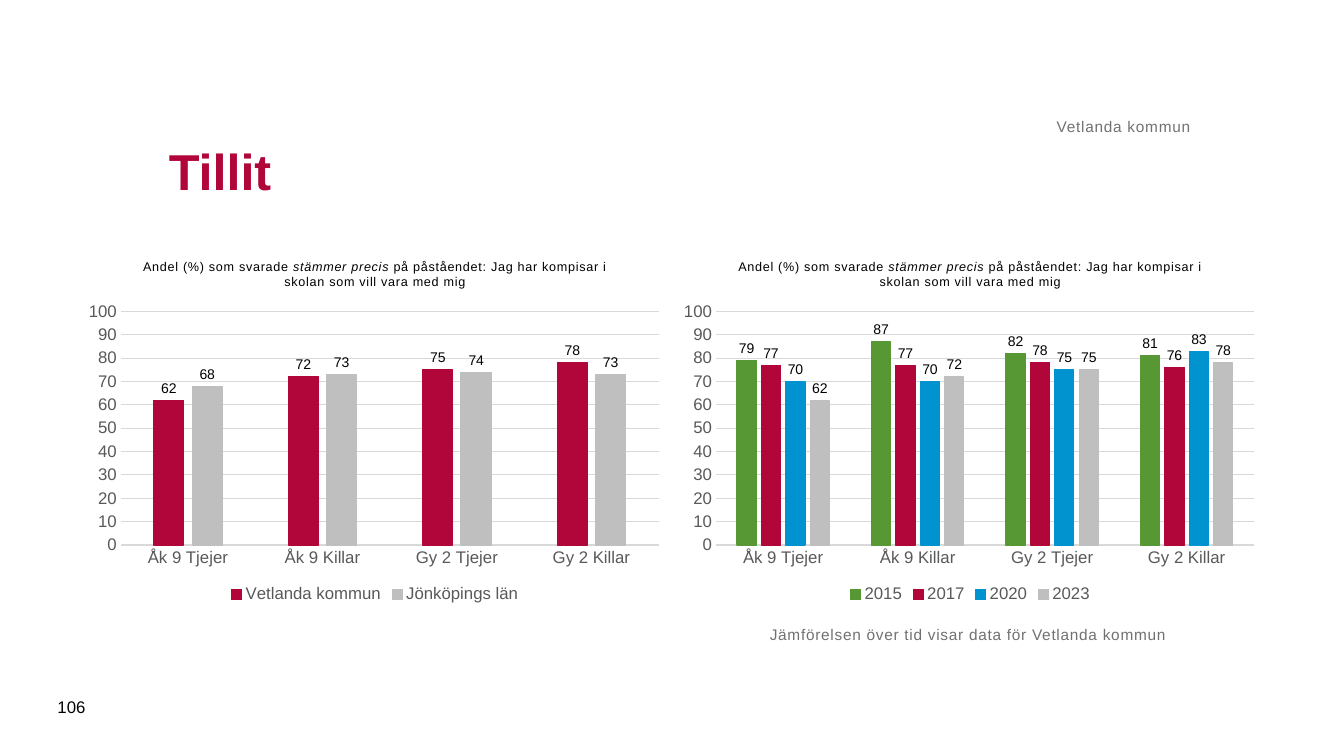
from pptx import Presentation
from pptx.chart.data import CategoryChartData
from pptx.dml.color import RGBColor
from pptx.enum.chart import XL_CHART_TYPE as ChartType
from pptx.enum.chart import XL_LABEL_POSITION as LabelPosition
from pptx.enum.chart import XL_LEGEND_POSITION as LegendPosition
from pptx.enum.chart import XL_TICK_MARK as TickMark
from pptx.enum.text import MSO_ANCHOR as Anchor
from pptx.enum.text import PP_ALIGN as Align
from pptx.oxml import parse_xml
from pptx.oxml.ns import nsdecls
from pptx.util import Cm, Pt

CRIMSON = RGBColor(0xB1, 0x06, 0x3A)
GREEN = RGBColor(0x57, 0x98, 0x35)
BLUE = RGBColor(0x00, 0x93, 0xD0)
SILVER = RGBColor(0xBF, 0xBF, 0xBF)
GRID = RGBColor(0xD9, 0xD9, 0xD9)
AXIS_TEXT = RGBColor(0x59, 0x59, 0x59)
NOTE_TEXT = RGBColor(0x71, 0x71, 0x71)
BLACK = RGBColor(0, 0, 0)

FONT = "Arial"
WHOLE_NUMBER = "#,##0;#,##0"
GROUPS = ["Åk 9 Tjejer", "Åk 9 Killar", "Gy 2 Tjejer", "Gy 2 Killar"]
QUESTION = [
    ("Andel (%) som svarade ", False),
    ("stämmer precis", True),
    (" på påståendet: Jag har kompisar i skolan som vill vara med mig", False),
]
PLOT_LAYOUT = {"x": 0.07, "y": 0.19, "w": 0.91, "h": 0.64}

BY_REGION = [
    ("Vetlanda kommun", [62, 72, 75, 78], CRIMSON),
    ("Jönköpings län", [68, 73, 74, 73], SILVER),
]
BY_YEAR = [
    ("2015", [79, 87, 82, 81], GREEN),
    ("2017", [77, 77, 78, 76], CRIMSON),
    ("2020", [70, 70, 75, 83], BLUE),
    ("2023", [62, 72, 75, 78], SILVER),
]


def style_font(font, size, color, bold=False):
    font.name = FONT
    font.size = Pt(size)
    font.bold = bold
    font.color.rgb = color


def space_letters(run):
    run.font._element.set("spc", "50")


def add_heading(slide, text):
    heading = slide.shapes.title
    heading.left, heading.top = Cm(4), Cm(2.5)
    heading.width, heading.height = Cm(26), Cm(3.6)
    frame = heading.text_frame
    frame.text = text
    frame.vertical_anchor = Anchor.MIDDLE
    frame.paragraphs[0].alignment = Align.LEFT
    style_font(frame.paragraphs[0].runs[0].font, 36, CRIMSON, bold=True)


def add_label(slide, text, place, size, color, anchor=Anchor.TOP, align=Align.LEFT):
    frame = slide.shapes.add_textbox(*map(Cm, place)).text_frame
    frame.word_wrap = True
    frame.vertical_anchor = anchor
    frame.text = text
    frame.paragraphs[0].alignment = align
    style_font(frame.paragraphs[0].runs[0].font, size, color)
    return frame


def add_spaced_label(slide, text, place, **position):
    frame = add_label(slide, text, place, 11, NOTE_TEXT, **position)
    frame.margin_left = frame.margin_right = 0
    frame.margin_top = frame.margin_bottom = 0
    space_letters(frame.paragraphs[0].runs[0])


def add_question(chart):
    chart.has_title = True
    paragraph = chart.chart_title.text_frame.paragraphs[0]
    for text, italic in QUESTION:
        run = paragraph.add_run()
        run.text = text
        style_font(run.font, 9, BLACK)
        run.font.italic = italic
        space_letters(run)
    chart.chart_title.include_in_layout = False


def place_plot(chart):
    plot_area = chart.element.xpath("c:chart/c:plotArea")[0]
    for layout in plot_area.xpath("c:layout"):
        plot_area.remove(layout)
    sizes = "".join(f'<c:{side} val="{share}"/>' for side, share in PLOT_LAYOUT.items())
    plot_area.insert(0, parse_xml(
        f'<c:layout {nsdecls("c")}><c:manualLayout><c:layoutTarget val="inner"/>'
        f'<c:xMode val="edge"/><c:yMode val="edge"/>{sizes}'
        '</c:manualLayout></c:layout>'))


def style_axes(chart):
    for axis in (chart.category_axis, chart.value_axis):
        axis.major_tick_mark = axis.minor_tick_mark = TickMark.NONE
        style_font(axis.tick_labels.font, 12, AXIS_TEXT)
    scale = chart.value_axis
    scale.minimum_scale, scale.maximum_scale, scale.major_unit = 0, 100, 10
    scale.tick_labels.number_format = WHOLE_NUMBER
    scale.tick_labels.number_format_is_linked = False
    scale.format.line.fill.background()
    scale.has_major_gridlines = True
    for line in (chart.category_axis.format.line, scale.major_gridlines.format.line):
        line.color.rgb = GRID
        line.width = Pt(0.75)


def style_bars(bars, color):
    bars.format.fill.solid()
    bars.format.fill.fore_color.rgb = color
    bars.format.line.color.rgb = color
    bars.format.line.width = Pt(0.75)
    labels = bars.data_labels
    labels.show_value = True
    labels.position = LabelPosition.OUTSIDE_END
    labels.number_format = WHOLE_NUMBER
    labels.number_format_is_linked = False
    style_font(labels.font, 10, BLACK)


def add_bar_chart(slide, left, answers):
    shares = CategoryChartData()
    shares.categories = GROUPS
    for name, values, _ in answers:
        shares.add_series(name, values)
    chart = slide.shapes.add_chart(
        ChartType.COLUMN_CLUSTERED, Cm(left), Cm(6.1), Cm(14.9), Cm(9.2), shares).chart
    style_font(chart.font, 10, BLACK)
    add_question(chart)
    place_plot(chart)
    style_axes(chart)
    plot = chart.plots[0]
    plot.gap_width, plot.overlap = 219, -27
    plot.vary_by_categories = False
    for bars, (_, _, color) in zip(plot.series, answers):
        style_bars(bars, color)
    chart.has_legend = True
    chart.legend.position = LegendPosition.BOTTOM
    chart.legend.include_in_layout = False
    style_font(chart.legend.font, 12, AXIS_TEXT)


def main():
    deck = Presentation()
    deck.slide_width, deck.slide_height = Cm(33.87), Cm(19.05)
    slide = deck.slides.add_slide(deck.slide_layouts[5])
    add_bar_chart(slide, 2, BY_REGION)
    add_bar_chart(slide, 17, BY_YEAR)
    add_heading(slide, "Tillit")
    add_spaced_label(slide, "Jämförelsen över tid visar data för Vetlanda kommun",
                     (19.4, 15.75, 13.5, 2.4))
    add_spaced_label(slide, "Vetlanda kommun", (4, 1.57, 26, 1.85),
                     anchor=Anchor.BOTTOM, align=Align.RIGHT)
    add_label(slide, "106", (1.2, 17.3, 1.45, 1.02), 12, BLACK, anchor=Anchor.MIDDLE)
    deck.save("out.pptx")


if __name__ == "__main__":
    main()
